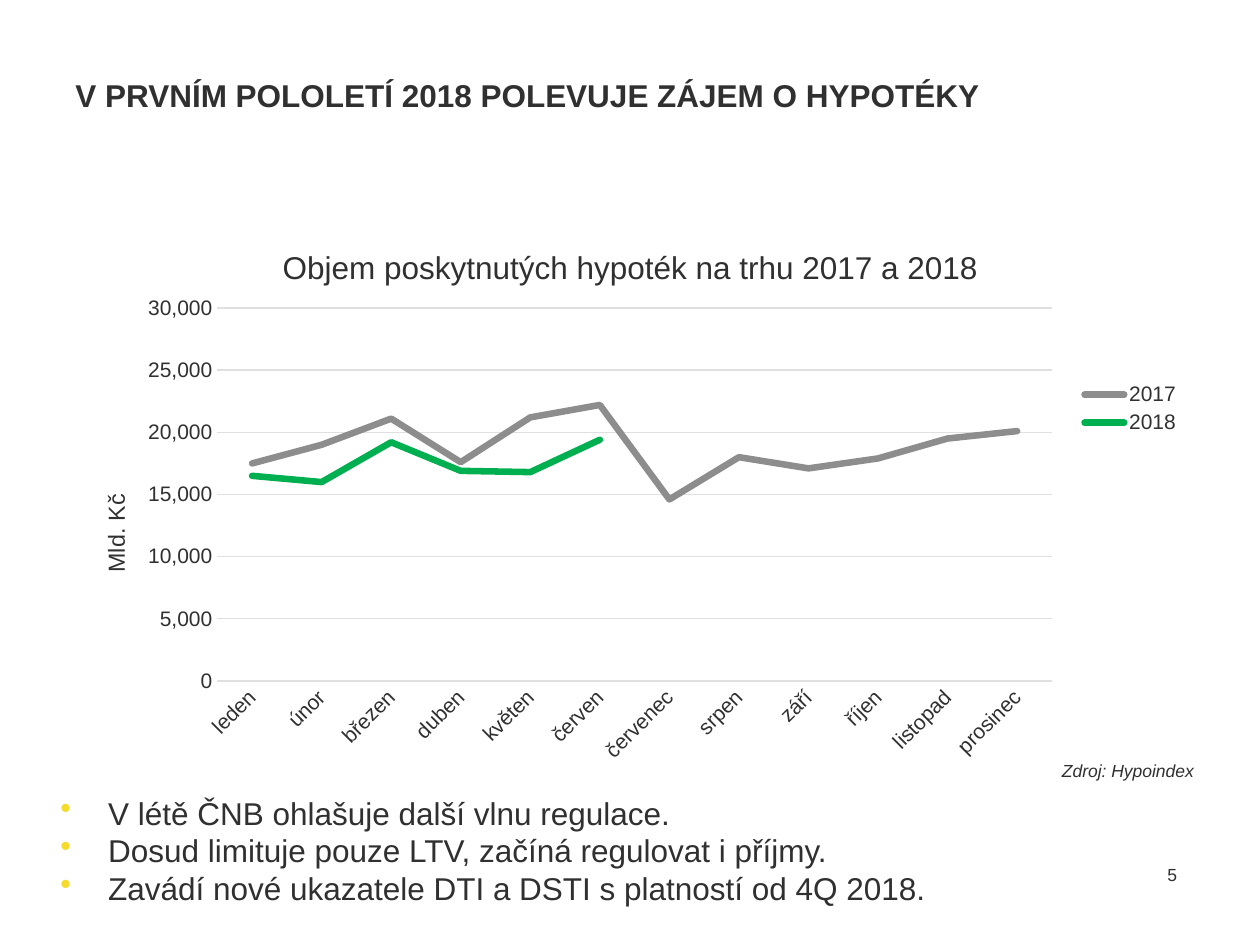
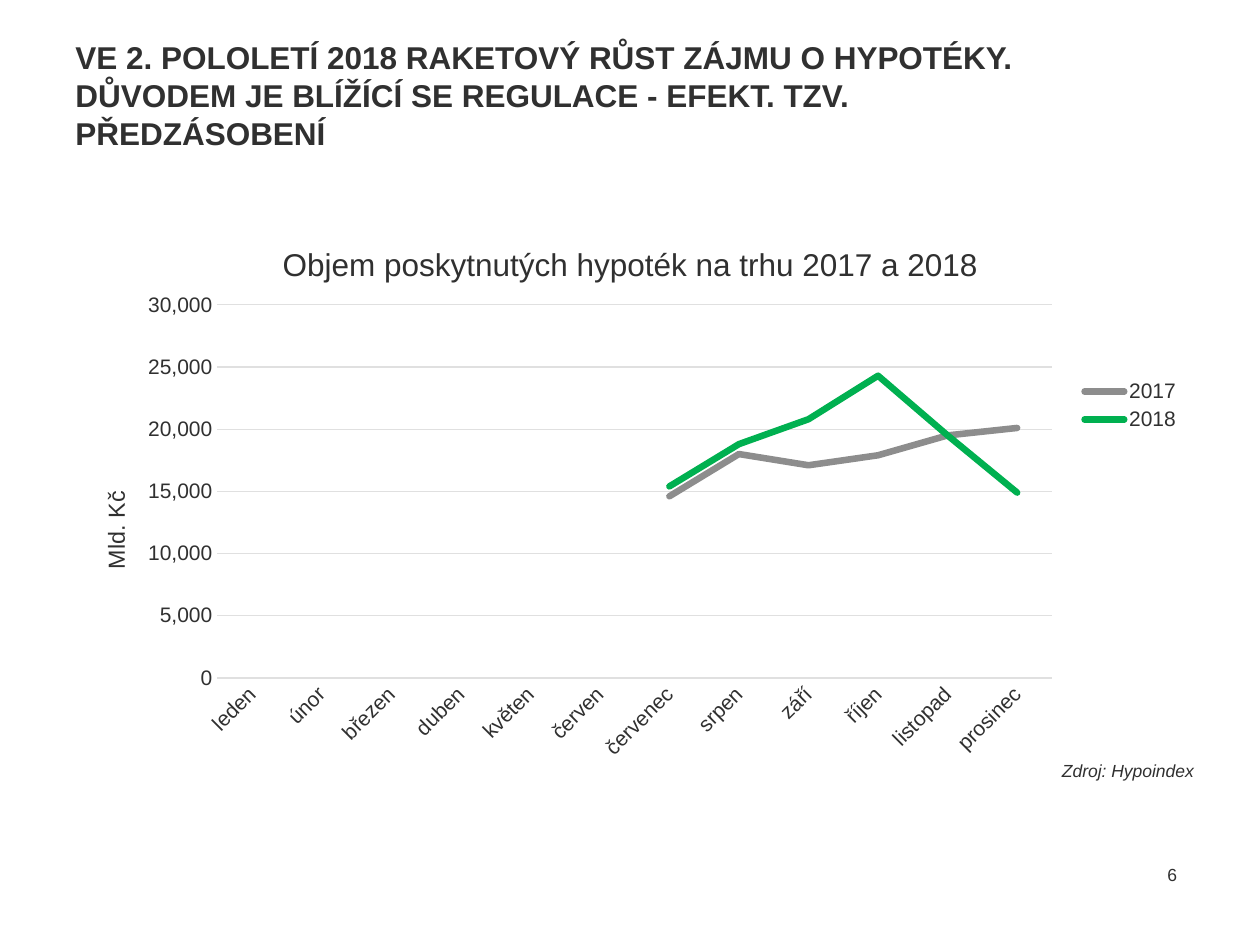
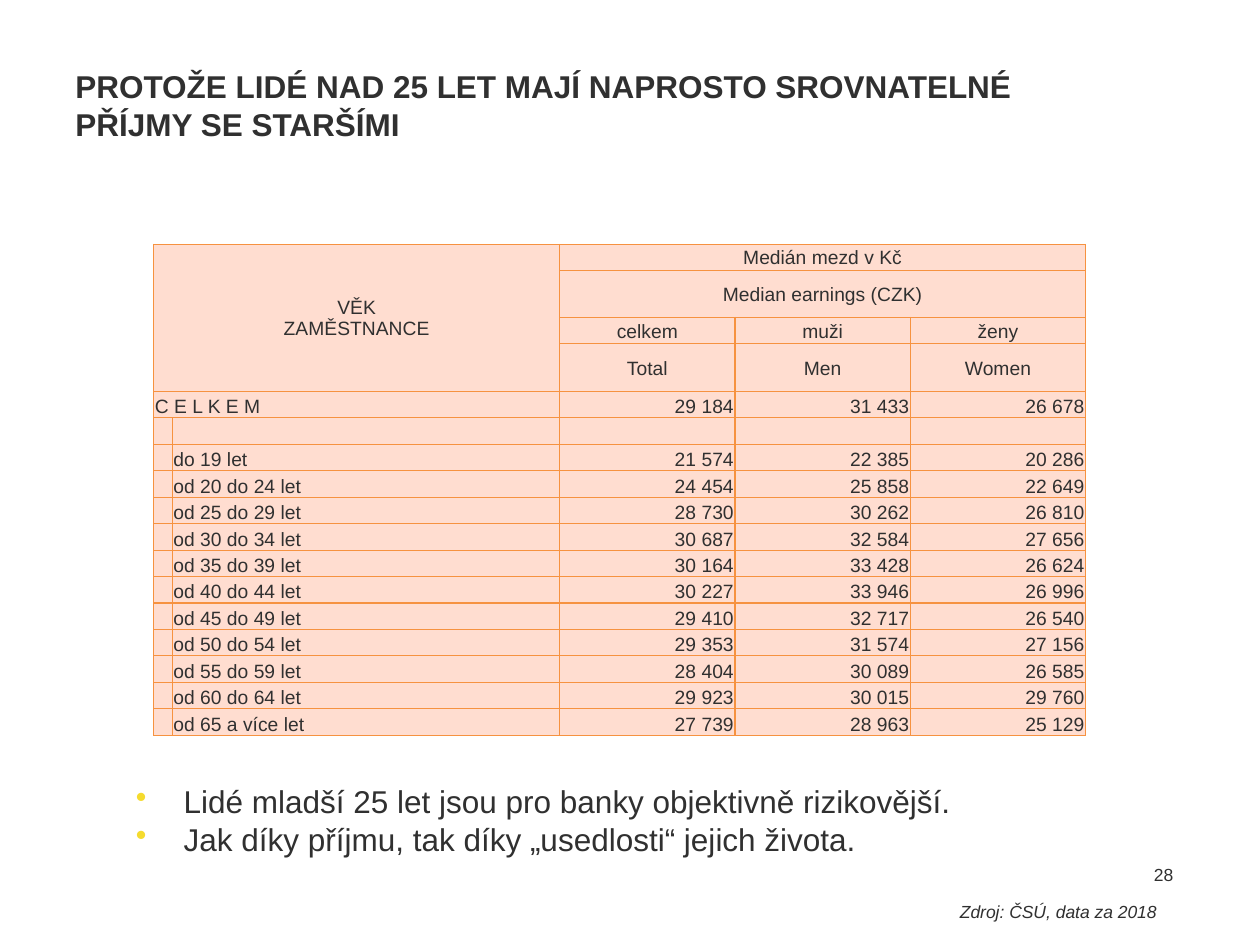
from pptx import Presentation
from pptx.chart.data import CategoryChartData
from pptx.dml.color import RGBColor
from pptx.enum.chart import XL_CHART_TYPE as ChartType
from pptx.enum.chart import XL_LEGEND_POSITION as LegendPosition
from pptx.enum.chart import XL_MARKER_STYLE as Marker
from pptx.enum.chart import XL_TICK_MARK as Tick
from pptx.enum.text import MSO_ANCHOR as Anchor
from pptx.enum.text import PP_ALIGN as Align
from pptx.oxml import parse_xml
from pptx.oxml.ns import nsdecls, qn
from pptx.oxml.xmlchemy import OxmlElement
from pptx.util import Inches, Pt

SLIDE_WIDTH, SLIDE_HEIGHT = Inches(10), Inches(7.5)
INK = RGBColor(0x30, 0x30, 0x30)
GRID = RGBColor(0xE0, 0xE0, 0xE0)
GREY = RGBColor(0x8D, 0x8D, 0x8D)
GREEN = RGBColor(0x00, 0xB0, 0x50)
YELLOW = RGBColor(0xF5, 0xDB, 0x2E)
PEACH = RGBColor(0xFF, 0xDD, 0xD0)
ORANGE = RGBColor(0xF6, 0x92, 0x40)

BASE = {"name": "Arial", "size": Pt(10)}
TITLE = {**BASE, "size": Pt(18), "bold": True}
BODY = {**BASE, "size": Pt(18)}
SOURCE = {**BASE, "italic": True}
AXIS = {**BASE, "size": Pt(12)}
UNIT = {**BASE, "size": Pt(13.3), "bold": False}
CELL = {**BASE, "size": Pt(11)}

MONTHS = ["leden", "únor", "březen", "duben", "květen", "červen",
          "červenec", "srpen", "září", "říjen", "listopad", "prosinec"]
FIRST_HALF_2017 = [17500, 19000, 21100, 17600, 21200, 22200]
SECOND_HALF_2017 = [14600, 18000, 17100, 17900, 19500, 20100]
FIRST_HALF_2018 = [16500, 16000, 19200, 16900, 16800, 19400]
SECOND_HALF_2018 = [15400, 18800, 20800, 24300, 19500, 14900]
NO_HALF = [None] * 6

EARNINGS = [
    ("do 19 let", "21 574", "22 385", "20 286"),
    ("od 20 do 24 let", "24 454", "25 858", "22 649"),
    ("od 25 do 29 let", "28 730", "30 262", "26 810"),
    ("od 30 do 34 let", "30 687", "32 584", "27 656"),
    ("od 35 do 39 let", "30 164", "33 428", "26 624"),
    ("od 40 do 44 let", "30 227", "33 946", "26 996"),
    ("od 45 do 49 let", "29 410", "32 717", "26 540"),
    ("od 50 do 54 let", "29 353", "31 574", "27 156"),
    ("od 55 do 59 let", "28 404", "30 089", "26 585"),
    ("od 60 do 64 let", "29 923", "30 015", "29 760"),
    ("od 65 a více let", "27 739", "28 963", "25 129"),
]
TABLE_ROWS = [
    ("VĚK\nZAMĚSTNANCE", "", "Medián mezd v Kč", "", ""),
    ("", "", "Median earnings (CZK)", "", ""),
    ("", "", "celkem", "muži", "ženy"),
    ("", "", "Total", "Men", "Women"),
    ("C E L K E M", "", "29 184", "31 433", "26 678"),
    ("",) * 5,
    *[("", *row) for row in EARNINGS],
]
HEADER_ROWS = 4
TALL_ROWS = (1, 3)
MERGES = [((0, 0), (3, 1)), ((0, 2), (0, 4)), ((1, 2), (1, 4)), ((4, 0), (4, 1))]


def area(left, top, width, height):
    """Turn percentages of the slide into left, top, width and height."""
    return (int(SLIDE_WIDTH * left / 100), int(SLIDE_HEIGHT * top / 100),
            int(SLIDE_WIDTH * width / 100), int(SLIDE_HEIGHT * height / 100))


def style(font, look):
    for name, value in look.items():
        setattr(font, name, value)
    font.color.rgb = INK


def add_text(page, place, lines, look, align=Align.LEFT, anchor=Anchor.TOP, wrap=True):
    box = page.shapes.add_textbox(*area(*place))
    frame = box.text_frame
    frame.word_wrap = wrap
    frame.vertical_anchor = anchor
    for number, line in enumerate(lines):
        para = frame.paragraphs[0] if number == 0 else frame.add_paragraph()
        para.text = line
        para.alignment = align
        for span in para.runs:
            style(span.font, look)
    return box


def add_title(page, text, height=8.4):
    add_text(page, (5, 5.87, 76.5, height), [text], TITLE, anchor=Anchor.MIDDLE)


def add_page_number(page, number, left=89.6):
    add_text(page, (left, 89.87, 4.8, 5.33), [str(number)], BASE, Align.RIGHT, Anchor.MIDDLE)


def add_source(page, text, place):
    add_text(page, place, [text], SOURCE, wrap=False)


def add_bullets(page, lines, place):
    box = add_text(page, place, lines, BODY)
    for para in box.text_frame.paragraphs:
        properties = para._p.get_or_add_pPr()
        properties.set("marL", str(Inches(0.38)))
        properties.set("indent", str(-Inches(0.38)))
        properties.append(parse_xml(
            f'<a:buClr {nsdecls("a")}><a:srgbClr val="{YELLOW}"/></a:buClr>'))
        properties.append(parse_xml(f'<a:buChar {nsdecls("a")} char="•"/>'))


def set_layout(element, inner=False, **shares):
    """Fix a chart part at shares (x, y, w, h) of the chart's size."""
    layout = element.find(qn("c:layout"))
    if layout is not None:
        element.remove(layout)
    target = '<c:layoutTarget val="inner"/>' if inner else ""
    modes = "".join(f'<c:{side}Mode val="edge"/>' for side in "xy")
    values = "".join(f'<c:{side} val="{share}"/>' for side, share in shares.items())
    layout = parse_xml(f'<c:layout {nsdecls("c")}><c:manualLayout>{target}{modes}{values}'
                       "</c:manualLayout></c:layout>")
    leading = [child for child in element if child.tag in (qn("c:tx"), qn("c:legendPos"))]
    element.insert(len(leading), layout)


def write_chart_title(title, text, look):
    para = title.text_frame.paragraphs[0]
    span = para.add_run()
    span.text = text
    style(span.font, look)


def style_axes(chart):
    months, volume = chart.category_axis, chart.value_axis
    for axis in (months, volume):
        axis.major_tick_mark = axis.minor_tick_mark = Tick.NONE
        style(axis.tick_labels.font, AXIS)
    months.format.line.color.rgb = GRID
    months.format.line.width = Pt(0.75)
    months._element.find(qn("c:txPr")).find(qn("a:bodyPr")).set("rot", "-2700000")

    volume.minimum_scale, volume.maximum_scale, volume.major_unit = 0, 30000, 5000
    volume.format.line.fill.background()
    volume.major_gridlines.format.line.color.rgb = GRID
    volume.major_gridlines.format.line.width = Pt(0.75)
    volume.tick_labels.number_format = "#,##0"
    volume.tick_labels.number_format_is_linked = False
    write_chart_title(volume.axis_title, "Mld. Kč", UNIT)
    body = volume.axis_title.text_frame._txBody.find(qn("a:bodyPr"))
    body.set("rot", "-5400000")
    body.set("vert", "horz")


def add_mortgage_chart(page, top, volumes_2017, volumes_2018):
    data = CategoryChartData(number_format="#,##0")
    data.categories = MONTHS
    data.add_series("2017", volumes_2017)
    data.add_series("2018", volumes_2018)
    chart = page.shapes.add_chart(ChartType.LINE, *area(5, top, 89.4, 59.2), data).chart
    style(chart.font, BASE)
    chart.has_title = True
    write_chart_title(chart.chart_title, "Objem poskytnutých hypoték na trhu 2017 a 2018",
                      {**BODY, "bold": False})
    chart.has_legend = True
    chart.legend.position = LegendPosition.RIGHT
    chart.legend.include_in_layout = False
    style(chart.legend.font, AXIS)
    style_axes(chart)

    chart.plots[0].vary_by_categories = False
    for series, color in zip(chart.plots[0].series, (GREY, GREEN)):
        series.smooth = False
        series.marker.style = Marker.NONE
        line = series.format.line
        line.color.rgb = color
        line.width = Pt(3.75)
        line._ln.set("cap", "rnd")

    root = chart._chartSpace
    set_layout(root.xpath("c:chart/c:title")[0], x=0.19, y=0.05)
    set_layout(root.xpath("c:chart/c:plotArea")[0], inner=True, x=0.137, y=0.17, w=0.741, h=0.667)
    set_layout(root.xpath("c:chart/c:plotArea/c:valAx/c:title")[0], x=0.03, y=0.495)
    set_layout(root.xpath("c:chart/c:legend")[0], x=0.9, y=0.295, w=0.095, h=0.11)


def add_borders(cell):
    properties = cell._tc.get_or_add_tcPr()
    for side in "LRTB":
        properties.append(parse_xml(
            f'<a:ln{side} {nsdecls("a")} w="{Pt(0.75)}"><a:solidFill>'
            f'<a:srgbClr val="{ORANGE}"/></a:solidFill></a:ln{side}>'))


def fill_cell(cell, text, align, anchor):
    cell.margin_left = cell.margin_right = cell.margin_top = Inches(0.01)
    cell.margin_bottom = 0
    cell.vertical_anchor = anchor
    add_borders(cell)
    cell.fill.solid()
    cell.fill.fore_color.rgb = PEACH
    cell.text_frame.text = text
    for para in cell.text_frame.paragraphs:
        para.alignment = align
        for span in para.runs:
            style(span.font, CELL)
        if not para.runs:
            ending = OxmlElement("a:endParaRPr")
            ending.set("sz", "1100")
            para._p.append(ending)


def add_earnings_table(page):
    place = area(12.2, 25.87, 72.5, 51.4)
    table = page.shapes.add_table(len(TABLE_ROWS), 5, *place).table
    table.first_row = table.horz_banding = False
    for column, share in zip(table.columns, (0.02, 0.42, 0.19, 0.19, 0.19)):
        column.width = int(place[2] * share / 0.99)
    for number, values in enumerate(TABLE_ROWS):
        table.rows[number].height = Inches(0.37 if number in TALL_ROWS else 0.21)
        for column, text in enumerate(values):
            if number < HEADER_ROWS:
                align, anchor = Align.CENTER, Anchor.MIDDLE
            else:
                align, anchor = Align.RIGHT if column > 1 else Align.LEFT, Anchor.BOTTOM
            fill_cell(table.cell(number, column), text, align, anchor)
    for first, last in MERGES:
        table.cell(*first).merge(table.cell(*last))


def main():
    deck = Presentation()
    deck.slide_width, deck.slide_height = SLIDE_WIDTH, SLIDE_HEIGHT
    blank = deck.slide_layouts[6]
    first_half, second_half, earnings = [deck.slides.add_slide(blank) for _ in range(3)]
    index_source = ("Zdroj: Hypoindex", (83.3, 79.73, 12.6, 3.6))

    add_title(first_half, "V PRVNÍM POLOLETÍ 2018 POLEVUJE ZÁJEM O HYPOTÉKY")
    add_page_number(first_half, 5)
    add_source(first_half, *index_source)
    add_mortgage_chart(first_half, 22.53, FIRST_HALF_2017 + SECOND_HALF_2017,
                       FIRST_HALF_2018 + [None] * 5 + SECOND_HALF_2018[-1:])
    add_bullets(first_half, ["V létě ČNB ohlašuje další vlnu regulace.",
                             "Dosud limituje pouze LTV, začíná regulovat i příjmy.",
                             "Zavádí nové ukazatele DTI a DSTI s platností od 4Q 2018."],
                (3.8, 83.33, 82.5, 13.47))

    add_title(second_half, "VE 2. POLOLETÍ 2018 RAKETOVÝ RŮST ZÁJMU O HYPOTÉKY.\n"
                           "DŮVODEM JE BLÍŽÍCÍ SE REGULACE - EFEKT. TZV. PŘEDZÁSOBENÍ")
    add_page_number(second_half, 6)
    add_source(second_half, *index_source)
    add_mortgage_chart(second_half, 22.2, NO_HALF + SECOND_HALF_2017, NO_HALF + SECOND_HALF_2018)

    add_title(earnings, "PROTOŽE LIDÉ NAD 25 LET MAJÍ NAPROSTO SROVNATELNÉ PŘÍJMY SE STARŠÍMI",
              height=10.53)
    add_page_number(earnings, 28, left=89.3)
    add_source(earnings, "Zdroj: ČSÚ, data za 2018", (75.2, 94.67, 17.7, 3.6))
    add_earnings_table(earnings)
    add_bullets(earnings, ["Lidé mladší 25 let jsou pro banky objektivně rizikovější.",
                           "Jak díky příjmu, tak díky „usedlosti“ jejich života."],
                (9.8, 82.13, 86.7, 9.47))
    deck.save("out.pptx")


if __name__ == "__main__":
    main()
